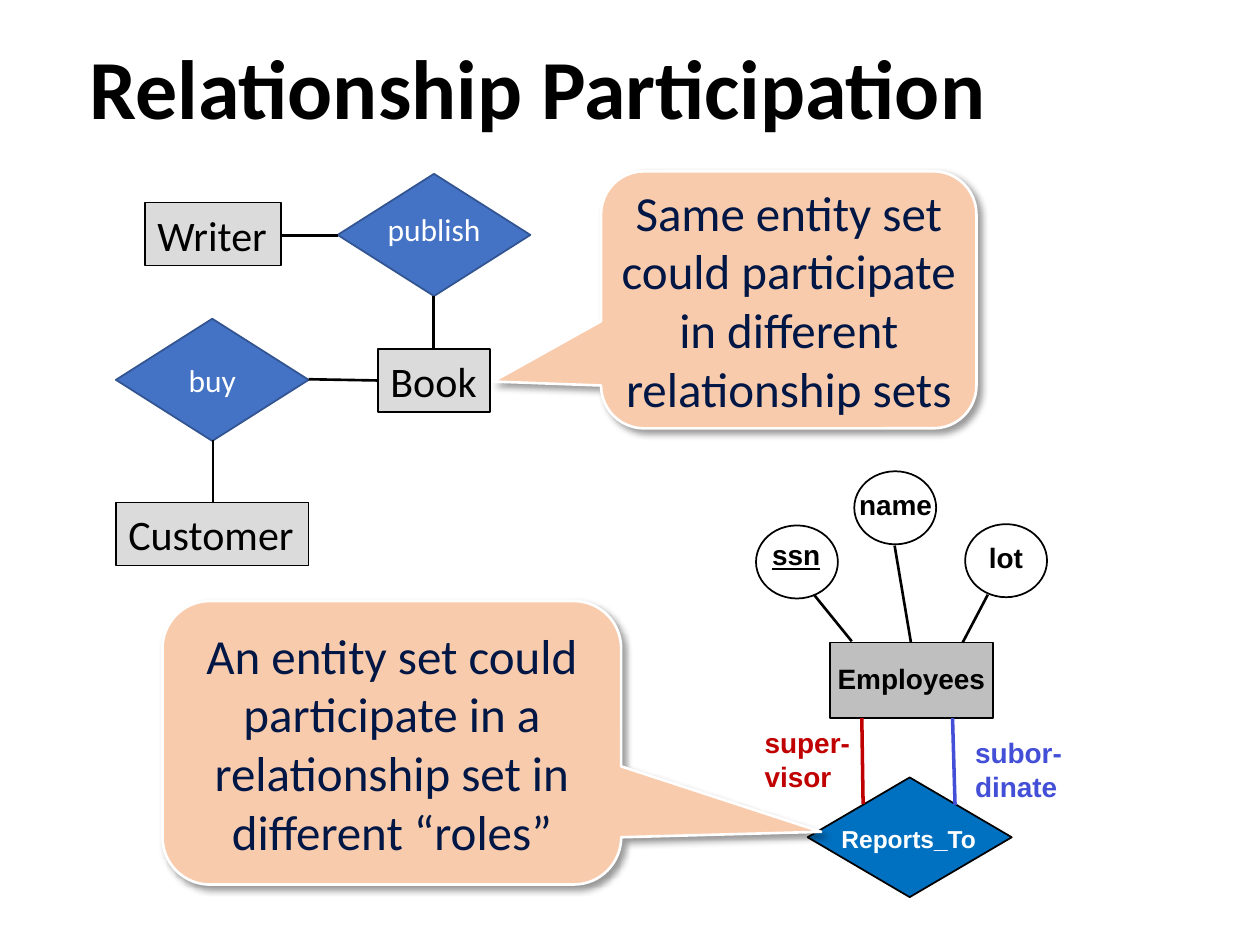
"""Build the Relationship Participation slide with two entity diagrams."""
import pptx
import pptx.util
import pptx.oxml
import pptx.dml.color
import pptx.enum.shapes
import pptx.enum.text
from lxml import etree

KIND = pptx.enum.shapes.MSO_SHAPE
ALIGN = pptx.enum.text.PP_ALIGN
ANCHOR = pptx.enum.text.MSO_ANCHOR
FIT = pptx.enum.text.MSO_AUTO_SIZE
Inches = pptx.util.Inches
NS = "http://schemas.openxmlformats.org/drawingml/2006/main"

TITLE = "Relationship Participation"
RED, BLUE = "C00000", "434FD6"
OVALS = [(6.78, 3.74), (6.0, 4.17), (7.66, 4.16)]
LABELS = [
    ("lot", (7.75, 4.24, 0.47, 0.36), {}),
    ("name", (6.72, 3.82, 0.78, 0.36), {}),
    ("Employees", (6.55, 5.2, 1.37, 0.36), {}),
    ("subor-dinate", (7.64, 5.79, 0.98, 0.63), {"color": BLUE, "wrap": True}),
    ("super-visor", (5.97, 5.71, 0.91, 0.63), {"color": RED, "wrap": True}),
    ("ssn", (6.03, 4.22, 0.58, 0.36), {"under": True}),
]
ROLES = [
    ((6.84, 5.7), (6.85, 6.38), RED, 2),
    ((7.56, 5.7), (7.58, 6.39), BLUE, 2),
    ((6.46, 4.72), (6.76, 5.09), "000000", 1.5),
    ((7.1, 4.33), (7.23, 5.1), "000000", 1.5),
    ((7.84, 4.72), (7.64, 5.1), "000000", 1.5),
]
ENTS = [
    ("Writer", (1.15, 1.61, 1.08, 0.5)),
    ("Book", (3.0, 2.77, 0.89, 0.5)),
    ("Customer", (0.92, 3.99, 1.53, 0.5)),
]
RELS = [("publish", (2.68, 1.38), 0.1), ("buy", (0.92, 2.53), 0)]
LINKS = [
    ((2.68, 1.87), (2.23, 1.87)),
    ((3.44, 2.35), (3.44, 2.77)),
    ((3.0, 3.02), (2.45, 3.01)),
    ((1.69, 3.49), (1.69, 3.99)),
]
ROLE_NOTE = ("An entity set could participate in a relationship set "
             "in different “roles”")
SET_NOTE = ("Same entity set could participate in different "
            "relationship sets")

deck = pptx.Presentation()
deck.slide_width, deck.slide_height = Inches(10), Inches(7.5)
slide = deck.slides.add_slide(deck.slide_layouts[6])


def rgb(code):
    return pptx.dml.color.RGBColor.from_string(code)


def write(item, text, size=16, face="Arial", color="000000", bold=False,
          under=False, wrap=False, grow=False, align=ALIGN.LEFT,
          anchor=ANCHOR.TOP, pads=(0.1, 0.05, 0.1, 0.05), space=None):
    frame = item.text_frame
    frame.word_wrap = wrap
    frame.auto_size = FIT.SHAPE_TO_FIT_TEXT if grow else FIT.NONE
    frame.vertical_anchor = anchor
    (frame.margin_left, frame.margin_top,
     frame.margin_right, frame.margin_bottom) = map(Inches, pads)
    para = frame.paragraphs[0]
    para.alignment, para.line_spacing = align, space
    run = para.add_run()
    run.text = text
    font = run.font
    font.size, font.name = pptx.util.Pt(size), face
    font.bold, font.underline = bold, under
    font.color.rgb = rgb(color)


def label(text, box, **form):
    write(slide.shapes.add_textbox(*map(Inches, box)), text, **form)


def shape(kind, box, fill=None, line="000000", width=1):
    item = slide.shapes.add_shape(kind, *map(Inches, box))
    item.shadow.inherit = False
    if fill:
        item.fill.solid()
        item.fill.fore_color.rgb = rgb(fill)
    else:
        item.fill.background()
    item.line.color.rgb = rgb(line)
    item.line.width = pptx.util.Pt(width)
    return item


def link(start, end, color="000000", width=1.5):
    line = slide.shapes.add_connector(
        pptx.enum.shapes.MSO_CONNECTOR.STRAIGHT, *map(Inches, start + end))
    line.line.color.rgb = rgb(color)
    line.line.width = pptx.util.Pt(width)
    etree.SubElement(line._element.spPr, f"{{{NS}}}effectLst")


def center(item, text, size, color, foot=0):
    write(item, text, size=size, face="Calibri", color=color, wrap=True,
          align=ALIGN.CENTER, anchor=ANCHOR.MIDDLE, pads=(0, 0, 0, foot))


def callout(text, box, tip):
    item = shape(KIND.ROUNDED_RECTANGULAR_CALLOUT, box, "F8CBAD", "FFFFFF", 1.5)
    for spot, part in enumerate((*tip, 0.167)):
        item.adjustments[spot] = part
    glow = item._element.spPr.find(f"{{{NS}}}effectLst")
    glow.append(pptx.oxml.parse_xml(
        f'<a:outerShdw xmlns:a="{NS}" blurRad="50800" dist="38100" '
        'dir="2700000" algn="tl" rotWithShape="0"><a:srgbClr val="000000">'
        '<a:alpha val="40000"/></a:srgbClr></a:outerShdw>'))
    center(item, text, 28, "001746")


label(TITLE, (0.61, 0.27, 8.5, 0.92), size=48, face="Calibri", bold=True,
      wrap=True, anchor=ANCHOR.MIDDLE, space=0.9)

shape(KIND.DIAMOND, (6.41, 6.17, 1.62, 0.95), "0070C0")
label("Reports_To", (6.58, 6.49, 1.27, 0.33), size=14, color="FFFFFF",
      bold=True, grow=True)
for spot in OVALS:
    shape(KIND.OVAL, (*spot, 0.65, 0.58))
shape(KIND.RECTANGLE, (6.59, 5.1, 1.29, 0.6), "BFBFBF")
for text, box, form in LABELS:
    label(text, box, bold=True, grow=True, **form)
for role in ROLES:
    link(*role)
callout(ROLE_NOTE, (1.29, 4.77, 3.64, 2.25), (0.936, 0.314))

for text, box in ENTS:
    write(shape(KIND.RECTANGLE, box, "DBDBDB", width=0.75), text,
          size=24, face="Calibri", grow=True)
for text, spot, foot in RELS:
    item = shape(KIND.FLOWCHART_DECISION, (*spot, 1.53, 0.97),
                 "4472C4", "325491")
    center(item, text, 18, "FFFFFF", foot)
for ends in LINKS:
    link(*ends)
callout(SET_NOTE, (4.77, 1.36, 2.98, 2.04), (-0.788, 0.318))

deck.save("out.pptx")
